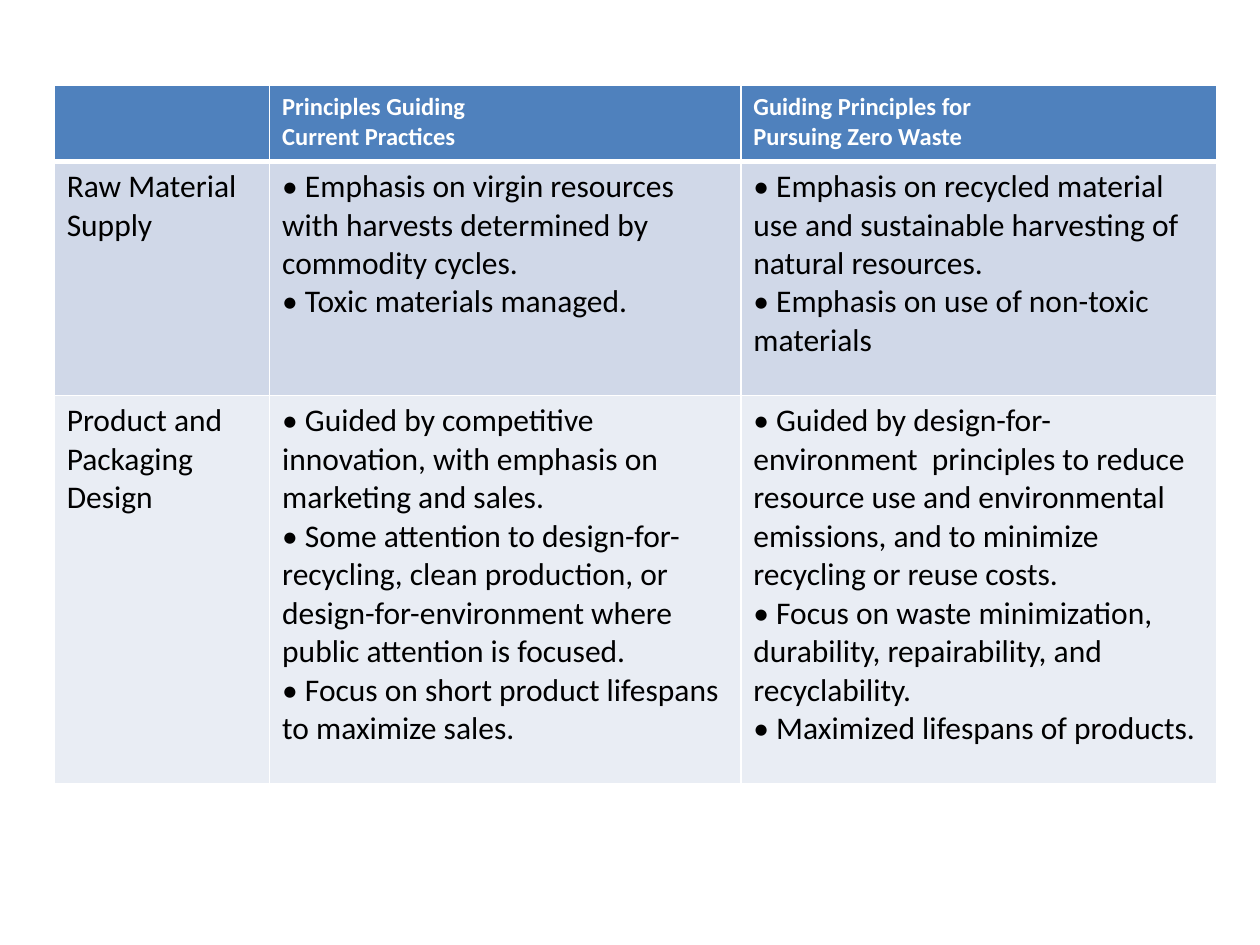
from lxml import etree
from pptx import Presentation
from pptx import util as u
from pptx.dml.color import RGBColor
from pptx.oxml.ns import qn

WHITE = "FFFFFF"
BODY_FORMAT = {"name": "Calibri", "size": u.Pt(18), "bold": False}
HEADER_FORMAT = {**BODY_FORMAT, "size": u.Pt(14), "bold": True}
COLUMN_WIDTHS = (1.71, 3.74, 3.78)
ROW_HEIGHTS = (0.6, 1.86, 3.08)
ROW_FILLS = ("4F81BD", "D0D8E8", "E9EDF4")

PRINCIPLES = [
    [
        "",
        "Principles Guiding\nCurrent Practices",
        "Guiding Principles for\nPursuing Zero Waste",
    ],
    [
        "Raw Material\nSupply",
        "• Emphasis on virgin resources with harvests determined by commodity cycles.\n"
        "• Toxic materials managed.",
        "• Emphasis on recycled material use and sustainable harvesting of natural resources.\n"
        "• Emphasis on use of non-toxic materials",
    ],
    [
        "Product and\nPackaging\nDesign",
        "• Guided by competitive innovation, with emphasis on marketing and sales.\n"
        "• Some attention to design-for-recycling, clean production, or "
        "design-for-environment where public attention is focused.\n"
        "• Focus on short product lifespans to maximize sales.",
        "• Guided by design-for-environment  principles to reduce resource use and "
        "environmental emissions, and to minimize recycling or reuse costs.\n"
        "• Focus on waste minimization, durability, repairability, and recyclability.\n"
        "• Maximized lifespans of products.",
    ],
]


def paint(target, color):
    """Give a fill a solid colour from a hex string."""
    target.solid()
    target.fore_color.rgb = RGBColor.from_string(color)


def add_borders(cell, widths):
    """Draw white cell borders from a dict of side to width in points."""
    properties = cell._tc.get_or_add_tcPr()
    for side, width in widths.items():
        line = etree.SubElement(properties, qn(f"a:ln{side}"), w=str(u.Pt(width)))
        solid = etree.SubElement(line, qn("a:solidFill"))
        etree.SubElement(solid, qn("a:srgbClr"), val=WHITE)


def fill_cell(cell, wording, row):
    """Write and format one cell according to its row."""
    add_borders(cell, {"L": 1, "R": 1, "T": 3 if row == 1 else 1, "B": 3 if row == 0 else 1})
    paint(cell.fill, ROW_FILLS[row])
    cell.text = wording
    for paragraph in cell.text_frame.paragraphs:
        for attribute, value in (BODY_FORMAT if row else HEADER_FORMAT).items():
            setattr(paragraph.font, attribute, value)
        for run in paragraph.runs:
            for attribute, value in (BODY_FORMAT if row else HEADER_FORMAT).items():
                setattr(run.font, attribute, value)
            paint(run.font.fill, "000000" if row else WHITE)


def add_principles(slide, left, top):
    """Place the comparison of principles with its corner at left, top."""
    principles = slide.shapes.add_table(
        len(ROW_HEIGHTS), len(COLUMN_WIDTHS), left, top,
        u.Inches(sum(COLUMN_WIDTHS)), u.Inches(sum(ROW_HEIGHTS)),
    ).table
    for column, width in zip(principles.columns, COLUMN_WIDTHS):
        column.width = u.Inches(width)
    for row, height in enumerate(ROW_HEIGHTS):
        principles.rows[row].height = u.Inches(height)
        for column, wording in enumerate(PRINCIPLES[row]):
            fill_cell(principles.cell(row, column), wording, row)


def main():
    """Build and save the slide."""
    deck = Presentation()
    deck.slide_width, deck.slide_height = u.Inches(10), u.Inches(7.5)
    slide = deck.slides.add_slide(deck.slide_layouts[6])
    paint(slide.background.fill, WHITE)
    add_principles(slide, u.Inches(0.43), u.Inches(0.68))
    deck.save("out.pptx")


if __name__ == "__main__":
    main()
